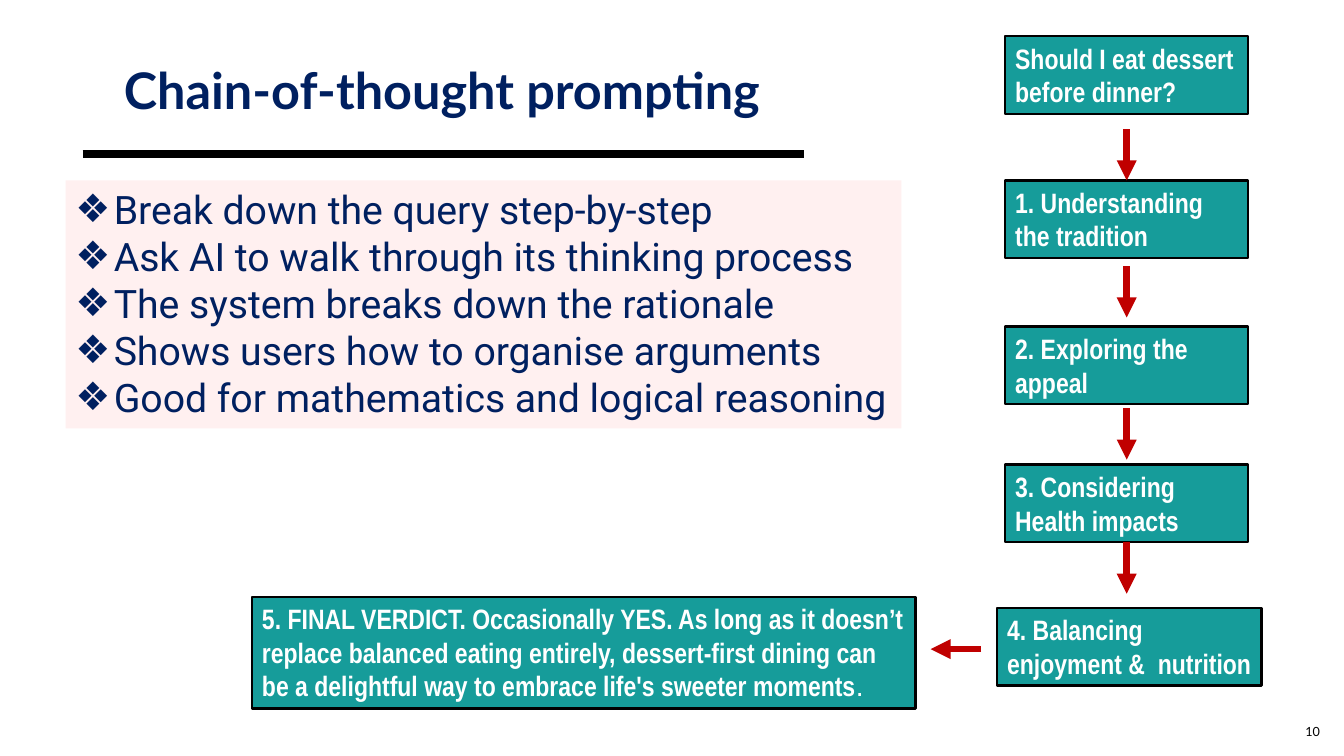
from collections import namedtuple

from lxml.etree import SubElement
from pptx import Presentation
from pptx.dml.color import RGBColor
from pptx.enum.shapes import MSO_CONNECTOR, MSO_SHAPE
from pptx.enum.text import MSO_ANCHOR, MSO_AUTO_SIZE, PP_ALIGN
from pptx.oxml.ns import qn
from pptx.util import Inches, Pt

Box = namedtuple("Box", "left top width height")

NAVY, TEAL, RED, BLUSH = "002060", "169C9A", "C00000", "FFCCCC"
BLACK, WHITE = "000000", "FFFFFF"
TOP, BOTTOM = 0, 2

POINTS = [
    "Break down the query step-by-step",
    "Ask AI to walk through its thinking process",
    "The system breaks down the rationale",
    "Shows users how to organise arguments",
    "Good for mathematics and logical reasoning",
]
STEPS = [
    (0, "Should I eat dessert before dinner?"),
    (1.43, "1. Understanding the tradition"),
    (2.88, "2. Exploring the appeal"),
    (4.25, "3. Considering Health impacts"),
]
BALANCING = "4. Balancing enjoyment &  nutrition"
VERDICT = (
    "5. FINAL VERDICT. Occasionally YES. As long as it doesn’t replace balanced "
    "eating entirely, dessert-first dining can be a delightful way to embrace "
    "life's sweeter moments"
)


def paint(color_format, color):
    """Give a fill or line colour from a hex string."""
    color_format.rgb = RGBColor.from_string(color)


def write(paragraph, text, size=20, font="Arial Narrow", color=WHITE, bold=False,
          align=PP_ALIGN.LEFT):
    """Add a formatted run to a paragraph."""
    paragraph.alignment = align
    run = paragraph.add_run()
    run.text = text
    run.font.size = Pt(size)
    run.font.name = font
    run.font.bold = bold
    paint(run.font.color, color)


def add_label(slide, box, text, anchor=MSO_ANCHOR.TOP, **text_format):
    """Add a text box with one formatted line and return its paragraph."""
    frame = slide.shapes.add_textbox(*map(Inches, box)).text_frame
    frame.word_wrap = True
    frame.vertical_anchor = anchor
    paragraph = frame.paragraphs[0]
    write(paragraph, text, **text_format)
    return paragraph


def add_panel(slide, box, fill, outline=None):
    """Add a filled rectangle that grows with its text."""
    panel = slide.shapes.add_shape(MSO_SHAPE.RECTANGLE, *map(Inches, box))
    panel.shadow.inherit = False
    panel.fill.solid()
    paint(panel.fill.fore_color, fill)
    if outline:
        paint(panel.line.color, outline)
        panel.line.width = Pt(1.75)
    else:
        panel.line.fill.background()
    frame = panel.text_frame
    frame.word_wrap = True
    frame.auto_size = MSO_AUTO_SIZE.SHAPE_TO_FIT_TEXT
    frame.vertical_anchor = MSO_ANCHOR.TOP
    return panel


def add_step(slide, box, text):
    """Add one teal step of the reasoning chain."""
    step = add_panel(slide, box, TEAL, BLACK)
    write(step.text_frame.paragraphs[0], text, bold=True)
    return step


def add_line(slide, start, end, color, width, arrow=False):
    """Add a straight line, with an arrowhead at its end if asked."""
    line = slide.shapes.add_connector(
        MSO_CONNECTOR.STRAIGHT, *map(Inches, (*start, *end)))
    paint(line.line.color, color)
    line.line.width = Pt(width)
    if arrow:
        SubElement(line.line._get_or_add_ln(), qn("a:tailEnd"), type="triangle")
    SubElement(line._element.spPr, qn("a:effectLst"))
    return line


def add_heading(slide, box):
    """Place the title and the rule beneath it."""
    title_box = Box(box.left + 0.31, box.top, 11.08, 0.71)
    title = add_label(slide, title_box, "Chain-of-thought prompting",
                      size=36, font="Lato", color=NAVY, bold=True)
    title.line_spacing = 0.9
    bottom = box.top + box.height
    add_line(slide, (box.left, bottom), (box.left + box.width, bottom), BLACK, 6)


def add_points(slide, box):
    """Place the tinted panel of bulleted points."""
    panel = add_panel(slide, box, BLUSH)
    tint = panel._element.spPr.find(qn("a:solidFill"))[0]
    SubElement(tint, qn("a:alpha"), val="29000")
    frame = panel.text_frame
    for index, point in enumerate(POINTS):
        paragraph = frame.add_paragraph() if index else frame.paragraphs[0]
        write(paragraph, point, size=28, font="Roboto", color=NAVY)
        properties = paragraph._p.get_or_add_pPr()
        properties.set("marL", str(Inches(0.38)))
        properties.set("indent", str(Inches(-0.38)))
        SubElement(properties, qn("a:buFont"), typeface="Arial")
        SubElement(properties, qn("a:buChar"), char="❖")


def add_chain(slide, box):
    """Place the column of steps and the arrows that lead down it."""
    step_height, arrow_length = 0.77, 0.51
    middle = box.left + box.width / 2
    steps = [
        add_step(slide, Box(box.left, box.top + offset, box.width, step_height), text)
        for offset, text in STEPS
    ]
    add_step(slide, Box(box.left - 0.08, box.top + box.height - step_height,
                        box.width + 0.21, step_height), BALANCING)
    arrows = [
        add_line(slide, (middle, box.top + offset),
                 (middle, box.top + offset + arrow_length), RED, 4.75, arrow=True)
        for offset in (0.92, 2.28, 3.69, 5.02)
    ]
    arrows[0].end_connect(steps[1], TOP)
    arrows[-1].begin_connect(steps[-1], BOTTOM)


def add_verdict(slide, box):
    """Place the final verdict and the arrow that leads left to it."""
    verdict = add_step(slide, box, VERDICT)
    write(verdict.text_frame.paragraphs[0], ".", font="Arial")
    right, level = box.left + box.width, box.top + 0.52
    add_line(slide, (right + 0.65, level), (right + 0.15, level), RED, 4.75, arrow=True)


def main():
    """Build the slide and save it."""
    presentation = Presentation()
    presentation.slide_width = Inches(13.33)
    presentation.slide_height = Inches(7.5)
    slide = presentation.slides.add_slide(presentation.slide_layouts[6])
    add_label(slide, Box(12.72, 7.06, 0.47, 0.4), "10", anchor=MSO_ANCHOR.MIDDLE,
              size=9, font="Lato", color=BLACK, align=PP_ALIGN.RIGHT)
    add_heading(slide, Box(0.82, 0.61, 7.15, 0.92))
    add_points(slide, Box(0.65, 1.79, 8.29, 2.46))
    add_chain(slide, Box(9.97, 0.36, 2.41, 6.44))
    add_verdict(slide, Box(2.5, 5.92, 6.58, 1.11))
    presentation.save("out.pptx")


if __name__ == "__main__":
    main()
